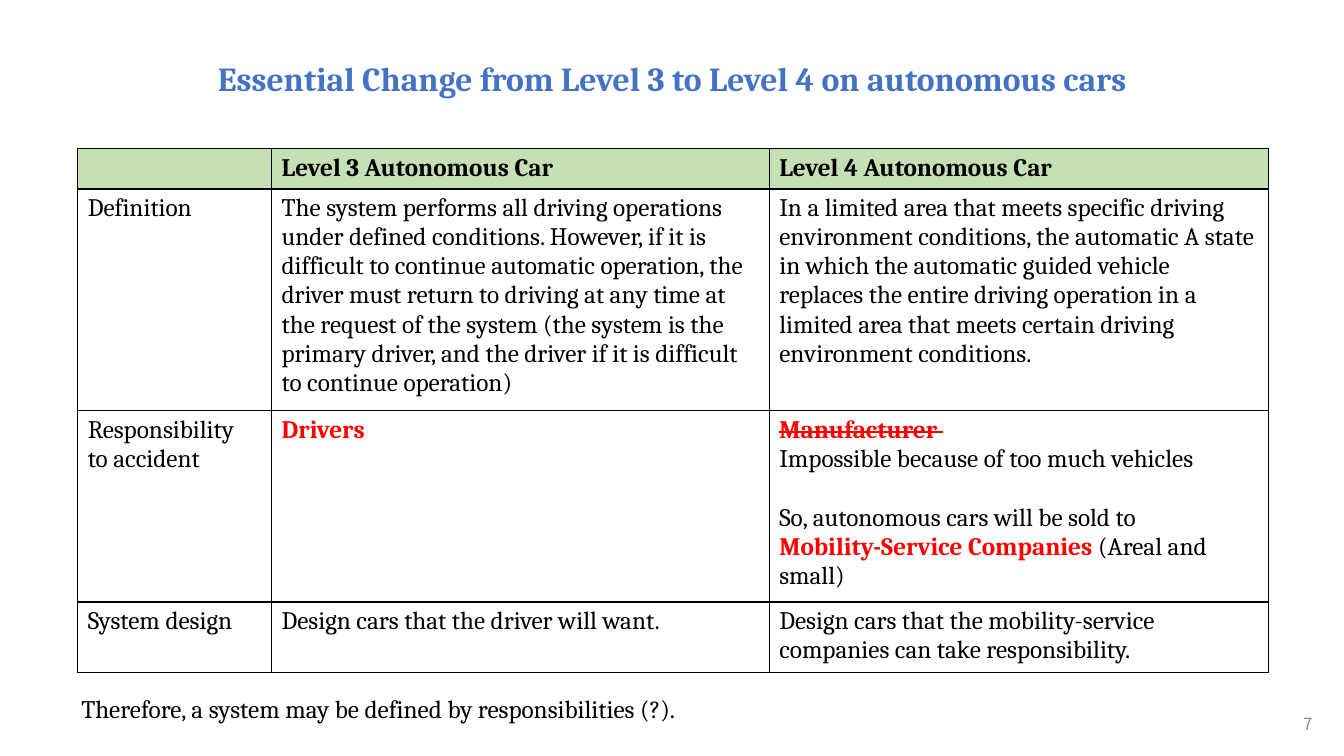
from lxml.etree import SubElement
from pptx import Presentation
from pptx.dml.color import RGBColor
from pptx.enum.text import MSO_ANCHOR, MSO_AUTO_SIZE, PP_ALIGN
from pptx.oxml.ns import qn
from pptx.util import Pt

BLACK = RGBColor(0x00, 0x00, 0x00)
BLUE = RGBColor(0x44, 0x72, 0xC4)
GRAY = RGBColor(0x8C, 0x8C, 0x8C)
GREEN = RGBColor(0xC5, 0xE0, 0xB4)
RED = RGBColor(0xFF, 0x00, 0x00)

SERIF = "Cambria"
SANS = "Noto Sans CJK JP"
COLUMN_WIDTHS = (138.5, 355.5, 356.5)
ROW_HEIGHTS = (29, 158.5, 136.5, 50.5)
COMPARISON = (
    ("", "Level 3 Autonomous Car", "Level 4 Autonomous Car"),
    (
        "Definition",
        "The system performs all driving operations under defined conditions. "
        "However, if it is difficult to continue automatic operation, the driver "
        "must return to driving at any time at the request of the system (the "
        "system is the primary driver, and the driver if it is difficult to "
        "continue operation)",
        "In a limited area that meets specific driving environment conditions, "
        "the automatic A state in which the automatic guided vehicle replaces "
        "the entire driving operation in a limited area that meets certain "
        "driving environment conditions.",
    ),
    ("Responsibility\nto accident", "Drivers", ""),
    (
        "System design",
        "Design cars that the driver will want.",
        "Design cars that the mobility-service companies can take responsibility.",
    ),
)


def set_font(font, size=18, color=BLACK, bold=False, face=SERIF):
    """Apply size, colour, weight and typeface to a run or paragraph font."""
    font.name = face
    font.size = Pt(size)
    font.color.rgb = color
    font.bold = bold


def place(shape, box):
    """Move a shape to a box of left, top, width and height in points."""
    shape.left, shape.top, shape.width, shape.height = map(Pt, box)


def add_title(slide, box):
    """Fill and format the title placeholder."""
    place(slide.shapes.title, box)
    frame = slide.shapes.title.text_frame
    frame.text = "Essential Change from Level 3 to Level 4 on autonomous cars"
    frame.auto_size = MSO_AUTO_SIZE.NONE
    frame.vertical_anchor = MSO_ANCHOR.TOP
    heading = frame.paragraphs[0]
    heading.alignment = PP_ALIGN.CENTER
    set_font(heading.font, 24, BLUE, True)


def add_borders(cell):
    """Draw a one-point black line on each side of a cell."""
    properties = cell._tc.get_or_add_tcPr()
    for side in ("a:lnL", "a:lnR", "a:lnT", "a:lnB"):
        line = SubElement(properties, qn(side), w=str(Pt(1)))
        fill = SubElement(line, qn("a:solidFill"))
        SubElement(fill, qn("a:srgbClr"), val=str(BLACK))


def fill_level_4_responsibility(frame):
    """Write the struck-out manufacturer and the companies that replace it."""
    frame.text = "\n".join((
        "Manufacturer ",
        "Impossible because of too much vehicles",
        "So, autonomous cars will be sold to",
    ))
    manufacturer, reason, conclusion = frame.paragraphs
    set_font(manufacturer.font, color=RED, bold=True)
    manufacturer.runs[0]._r.get_or_add_rPr().set("strike", "sngStrike")
    set_font(reason.font)
    set_font(conclusion.font)
    conclusion.space_before = Pt(21)
    buyers = frame.add_paragraph()
    companies, scale = buyers.add_run(), buyers.add_run()
    companies.text = "Mobility-Service Companies "
    set_font(companies.font, color=RED, bold=True)
    scale.text = "(Areal and small)"
    set_font(scale.font)


def add_comparison(slide, box):
    """Build the table that compares the two levels."""
    table = slide.shapes.add_table(
        len(ROW_HEIGHTS), len(COLUMN_WIDTHS), *map(Pt, box)
    ).table
    table.horz_banding = False
    for column, width in zip(table.columns, COLUMN_WIDTHS):
        column.width = Pt(width)
    for row, height, texts in zip(table.rows, ROW_HEIGHTS, COMPARISON):
        row.height = Pt(height)
        is_header = texts is COMPARISON[0]
        for cell, text in zip(row.cells, texts):
            add_borders(cell)
            if is_header:
                cell.fill.solid()
                cell.fill.fore_color.rgb = GREEN
            else:
                cell.fill.background()
            cell.text_frame.text = text
            is_driver = text == "Drivers"
            for paragraph in cell.text_frame.paragraphs:
                set_font(
                    paragraph.font,
                    color=RED if is_driver else BLACK,
                    bold=is_header or is_driver,
                )
    fill_level_4_responsibility(table.cell(2, 2).text_frame)


def add_conclusion(slide, box):
    """Write the closing sentence under the table."""
    frame = slide.shapes.add_textbox(*map(Pt, box)).text_frame
    frame.word_wrap = True
    frame.text = "Therefore, a system may be defined by responsibilities (?)."
    set_font(frame.paragraphs[0].font)


def add_page_number(slide, box):
    """Write the page number at the lower right."""
    frame = slide.shapes.add_textbox(*map(Pt, box)).text_frame
    frame.word_wrap = True
    frame.vertical_anchor = MSO_ANCHOR.MIDDLE
    frame.text = "7"
    number = frame.paragraphs[0]
    number.alignment = PP_ALIGN.RIGHT
    set_font(number.font, 12, GRAY, face=SANS)


def main():
    """Build the slide and save it."""
    presentation = Presentation()
    presentation.slide_width, presentation.slide_height = Pt(960), Pt(540)
    slide = presentation.slides.add_slide(presentation.slide_layouts[5])
    add_title(slide, (0, 37.5, 960, 36))
    add_comparison(slide, (55.5, 106, sum(COLUMN_WIDTHS), sum(ROW_HEIGHTS)))
    add_conclusion(slide, (51, 492, 816.5, 29))
    add_page_number(slide, (728.5, 502.5, 216, 29))
    presentation.save("out.pptx")


if __name__ == "__main__":
    main()
